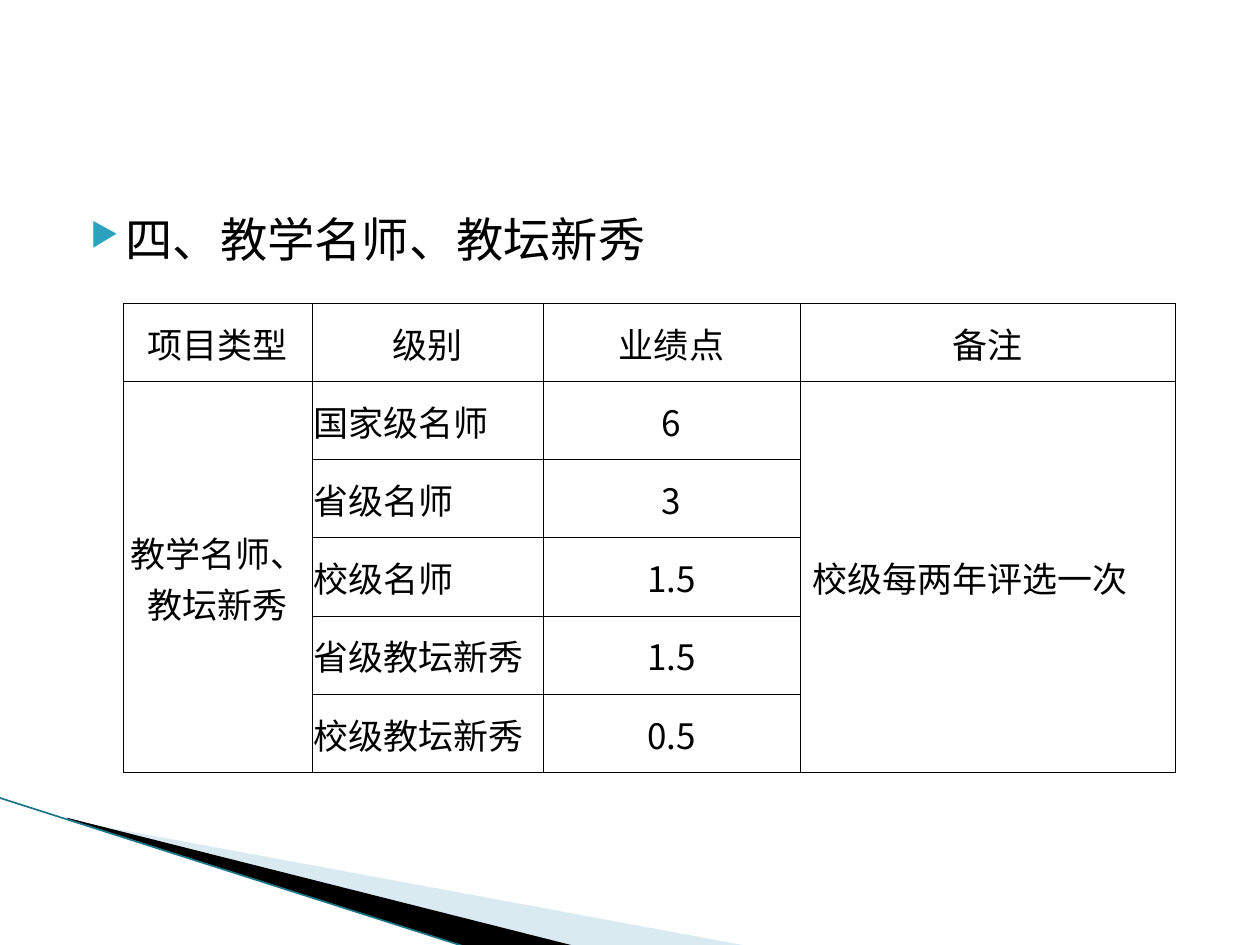
from pptx import Presentation
from pptx import oxml
from pptx.dml.color import RGBColor
from pptx.enum import shapes, text
from pptx.oxml import ns
from pptx.util import Inches, Pt

BLACK = RGBColor(0x00, 0x00, 0x00)
PALE_BLUE = RGBColor(0xA0, 0xCB, 0xDC)
TEAL = RGBColor(0x1B, 0x75, 0x87)
BULLET_BLUE = RGBColor(0x2D, 0xA2, 0xBF)

HEADERS = ["项目类型", "级别", "业绩点", "备注"]
LEVELS = [
    ("国家级名师", "6"),
    ("省级名师", "3"),
    ("校级名师", "1.5"),
    ("省级教坛新秀", "1.5"),
    ("校级教坛新秀", "0.5"),
]
CATEGORY = "教学名师、教坛新秀"
REMARK = "校级每两年评选一次　"


def add_xml(parent, tag, **attributes):
    child = oxml.parse_xml(f"<a:{tag} {ns.nsdecls('a')}/>")
    for name, value in attributes.items():
        child.set(name, str(value))
    parent.append(child)
    return child


def write(para, content, size=20, font="Noto Sans CJK SC", color=BLACK, align=None):
    para.alignment = align
    span = para.add_run()
    span.text = content
    span.font.size = Pt(size)
    span.font.color.rgb = color
    span.font.name = font
    add_xml(span.font._element, "ea", typeface="Noto Sans CJK SC")


class SlideBuilder:
    def __init__(self, page, body_font="Noto Sans CJK SC", border=0.5):
        self.page = page
        self.body_font = body_font
        self.border = border

    def wedge(self, points, color, opacity=None):
        corners = [(Inches(x), Inches(y)) for x, y in points]
        builder = self.page.shapes.build_freeform(*corners[0])
        builder.add_line_segments(corners[1:], close=True)
        shape = builder.convert_to_shape()
        shape.shadow.inherit = False
        shape.fill.solid()
        shape.fill.fore_color.rgb = color
        shape.line.fill.background()
        if opacity is not None:
            fill_color = next(shape._element.spPr.iter(ns.qn("a:srgbClr")))
            add_xml(fill_color, "alpha", val=opacity * 1000)

    def line(self, start, end, color, width):
        ends = [Inches(value) for value in (*start, *end)]
        line = self.page.shapes.add_connector(shapes.MSO_CONNECTOR.STRAIGHT, *ends)
        line.line.color.rgb = color
        line.line.width = Pt(width)
        add_xml(line._element.spPr, "effectLst")

    def bullet_heading(self, content, left, top, width, height):
        box = self.page.shapes.add_textbox(
            Inches(left), Inches(top), Inches(width), Inches(height))
        box.text_frame.word_wrap = True
        para = box.text_frame.paragraphs[0]
        properties = para._p.get_or_add_pPr()
        properties.set("marL", str(Inches(0.4)))
        properties.set("indent", str(Inches(-0.28)))
        add_xml(add_xml(properties, "buClr"), "srgbClr", val=BULLET_BLUE)
        add_xml(properties, "buSzPct", val=68000)
        add_xml(properties, "buChar", char="▶")
        write(para, content, size=27, font="DejaVu Sans Mono")

    def table(self, rows, left, top, widths, row_height):
        frame = self.page.shapes.add_table(
            len(rows), len(widths), Inches(left), Inches(top),
            Inches(sum(widths)), Inches(row_height * len(rows)))
        table = frame.table
        table.first_row = table.horz_banding = False
        for column, width in zip(table.columns, widths):
            column.width = Inches(width)
        for r, row in enumerate(rows):
            for c, content in enumerate(row):
                is_level = r > 0 and c == 1
                align = text.PP_ALIGN.LEFT if is_level else text.PP_ALIGN.CENTER
                self.cell(table.cell(r, c), content, align)
        return table

    def cell(self, cell, content, align):
        cell.margin_left = cell.margin_right = cell.margin_top = Inches(0.01)
        cell.margin_bottom = 0
        cell.vertical_anchor = text.MSO_ANCHOR.MIDDLE
        properties = cell._tc.get_or_add_tcPr()
        for side in ("lnL", "lnR", "lnT", "lnB"):
            edge = add_xml(properties, side, w=Pt(self.border))
            add_xml(add_xml(edge, "solidFill"), "srgbClr", val=BLACK)
        cell.fill.background()
        if content:
            write(cell.text_frame.paragraphs[0], content,
                  font=self.body_font, align=align)


def main():
    deck = Presentation()
    deck.slide_width, deck.slide_height = Inches(10), Inches(7.5)
    slide = SlideBuilder(deck.slides.add_slide(deck.slide_layouts[6]))

    slide.wedge([(0.55, 6.51), (5.95, 7.51), (4.56, 7.51), (0.55, 6.5)],
                PALE_BLUE, opacity=40)
    slide.wedge([(0.53, 6.49), (4.57, 7.51), (3.72, 7.52), (0.54, 6.5)], BLACK)
    slide.line((-0.01, 6.33), (3.71, 7.52), TEAL, 0.95)

    slide.bullet_heading("四、教学名师、教坛新秀", 0.5, 1.62, 9, 4.95)

    rows = [HEADERS] + [["", level, points, ""] for level, points in LEVELS]
    rows[1][0], rows[1][3] = CATEGORY, REMARK
    table = slide.table(rows, 0.98, 2.41, [1.5, 1.83, 2.04, 2.98], 0.62)
    for column in (0, 3):
        table.cell(1, column).merge(table.cell(len(LEVELS), column))

    deck.save("out.pptx")


if __name__ == "__main__":
    main()
